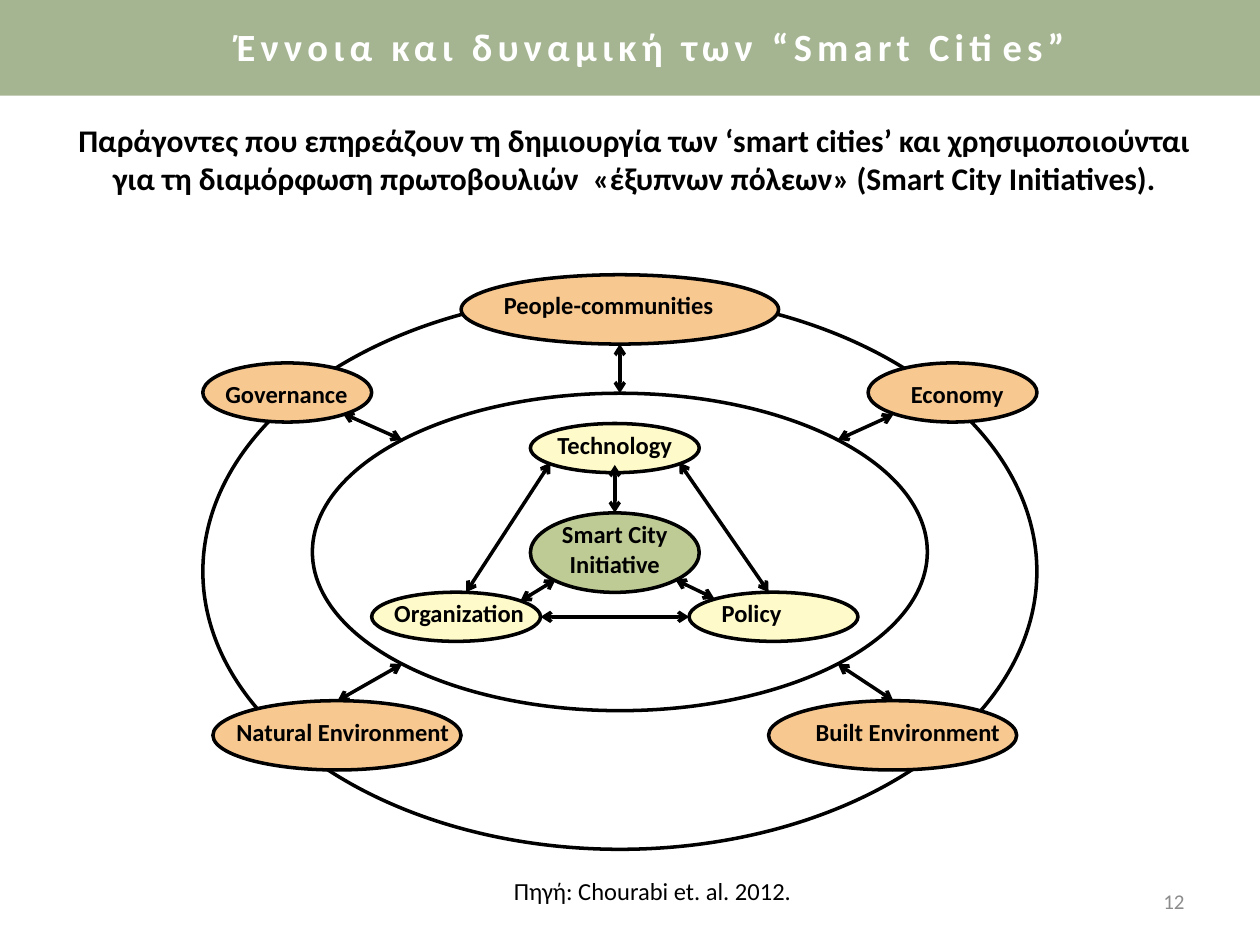
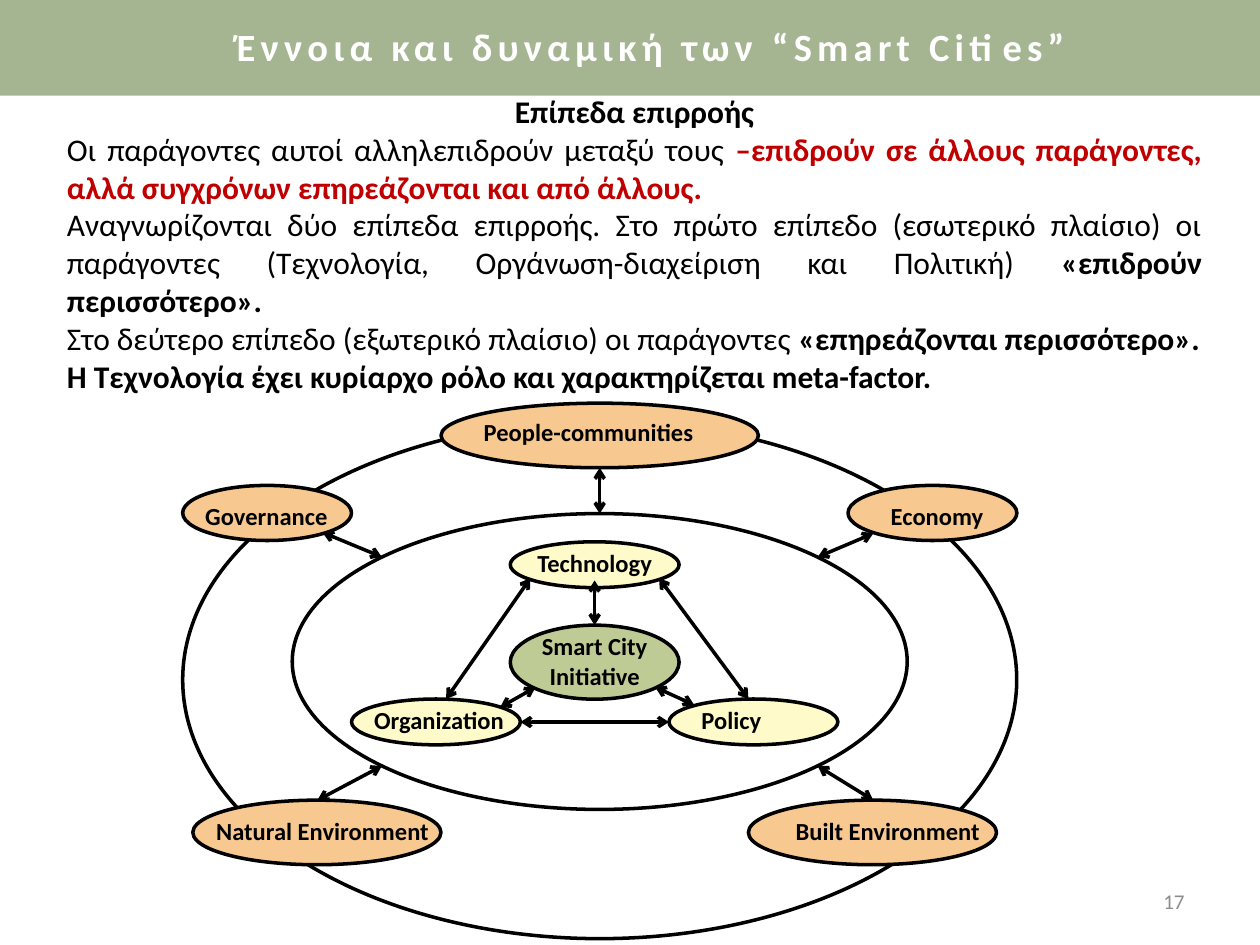
from lxml import etree
from pptx import Presentation
from pptx import util as u
from pptx.dml.color import RGBColor
from pptx.enum import shapes, text
from pptx.oxml.ns import qn

Pt = u.Pt
LEFT, CENTER, RIGHT, JUSTIFY = (text.PP_ALIGN.LEFT, text.PP_ALIGN.CENTER,
                                text.PP_ALIGN.RIGHT, text.PP_ALIGN.JUSTIFY)
COLORS = {
    "band": "A5B592", "white": "FFFFFF", "black": "000000", "number": "8C8C8C",
    "accent": "C00000", "outer": "F8C891", "inner": "FEFAC9", "core": "BECB95",
}
FONT = "Calibri"
TITLE = "Έννοια και δυναμική των “Smart Cities”"

# Diagram, in points from its top left corner
# Ellipses: left, top, width, height, fill
RINGS = [(0, 10.8, 476.6, 317.5, None), (62.6, 67.7, 351.4, 181.4, None)]
# Factors: the same, then label, its offset from the ellipse, width and alignment
FACTORS = [
    (147.6, 0, 181.4, 39.6, "outer", "People-communities", 17.3, 5, 141.8, LEFT),
    (0, 50.4, 96.5, 33.8, "outer", "Governance", 5.8, 5.8, 96.5, LEFT),
    (380.2, 50.4, 96.5, 33.8, "outer", "Economy", 17.3, 5.8, 96.5, LEFT),
    (5.8, 243.4, 141.8, 39.6, "outer", "Natural Environment", -28.1, 5.8, 204.5, CENTER),
    (323.3, 243.4, 141.8, 39.6, "outer", "Built Environment", 17.3, 5.8, 124.6, CENTER),
    (187.2, 85, 96.5, 28.1, "inner", "Technology", 0, 0, 96.5, CENTER),
    (96.5, 181.4, 96.5, 28.1, "inner", "Organization", 5.8, 0, 96.5, LEFT),
    (277.9, 181.4, 96.5, 28.1, "inner", "Policy", 11.5, 0, 96.5, LEFT),
    (187.2, 136.1, 96.5, 45.4, "core", "Smart City Initiative", 0, 0, 96.5, CENTER),
]
# Influences: from x, y to x, y
INFLUENCES = [
    (79.9, 79.2, 113.8, 94.3),       # Governance - inner ring
    (238.3, 39.6, 238.3, 67.7),      # People - inner ring
    (394.6, 79.9, 362.9, 94.3),      # Economy - inner ring
    (394.6, 243.4, 362.9, 222.5),    # Built Environment - inner ring
    (113.8, 222.5, 77, 243.4),       # inner ring - Natural Environment
    (198.7, 107.3, 150.5, 181.4),    # Technology - Organization
    (272.2, 107.3, 323.3, 181.4),    # Technology - Policy
    (193, 195.5, 277.9, 195.5),      # Organization - Policy
    (181.4, 186.5, 201.6, 174.2),    # Organization - Initiative
    (270, 174.2, 292.3, 185),        # Initiative - Policy
    (235.4, 108.7, 235.4, 136.1),    # Technology - Initiative
]

# Slides: runs are (text, bold, colour)
SLIDES = [
    {
        "number": "12", "body_top": 65.5, "body_height": 51,
        "origin": (115.9, 157), "scale": 1,
        "source": "Πηγή: Chourabi et. al. 2012.",
        "body": [
            (CENTER, [("Παράγοντες που επηρεάζουν τη δημιουργία των ‘smart cities’ και "
                       "χρησιμοποιούνται για τη διαμόρφωση πρωτοβουλιών  «έξυπνων πόλεων» "
                       "(Smart City Initiatives).", True, "black")]),
        ],
    },
    {
        "number": "17", "body_top": 49, "body_height": 204,
        "origin": (104.4, 230.4), "scale": 0.932,
        "source": None,
        "body": [
            (CENTER, [("Επίπεδα επιρροής", True, "black")]),
            (JUSTIFY, [("Οι παράγοντες αυτοί αλληλεπιδρούν μεταξύ τους ", False, "black"),
                       ("–επιδρούν σε άλλους παράγοντες, αλλά συγχρόνων επηρεάζονται και "
                        "από άλλους.", True, "accent")]),
            (JUSTIFY, [("Αναγνωρίζονται δύο επίπεδα επιρροής. Στο πρώτο επίπεδο (εσωτερικό "
                        "πλαίσιο) οι παράγοντες (Τεχνολογία, Οργάνωση-διαχείριση και "
                        "Πολιτική) ", False, "black"),
                       ("«επιδρούν περισσότερο».", True, "black")]),
            (JUSTIFY, [("Στο δεύτερο επίπεδο (εξωτερικό πλαίσιο) οι παράγοντες ",
                        False, "black"),
                       ("«επηρεάζονται περισσότερο».", True, "black")]),
            (JUSTIFY, [("Η Τεχνολογία έχει κυρίαρχο ρόλο και χαρακτηρίζεται meta-factor.",
                        True, "black")]),
        ],
    },
]


def add_run(paragraph, words, size, bold=False, color="black"):
    run = paragraph.add_run()
    run.text = words
    run.font.name = FONT
    run.font.size = Pt(size)
    run.font.bold = bold
    run.font.color.rgb = RGBColor.from_string(COLORS[color])
    return run


def place(shape, left, top, width, height, anchor=text.MSO_ANCHOR.TOP, wrap=True):
    shape.left, shape.top, shape.width, shape.height = map(Pt, (left, top, width, height))
    frame = shape.text_frame
    frame.auto_size = text.MSO_AUTO_SIZE.NONE
    frame.vertical_anchor = anchor
    frame.word_wrap = wrap
    return frame


prs = Presentation()
prs.slide_width, prs.slide_height = Pt(720), Pt(540)

for content in SLIDES:
    slide = prs.slides.add_slide(prs.slide_layouts[1])
    title, body = slide.placeholders

    # Band, behind the title
    band = slide.shapes.add_shape(shapes.MSO_SHAPE.RECTANGLE, 0, 0, prs.slide_width, Pt(54.7))
    band.shadow.inherit = False
    band.fill.solid()
    band.fill.fore_color.rgb = RGBColor.from_string(COLORS["band"])
    band.line.fill.background()
    slide.shapes._spTree.insert(2, band._element)

    # Title
    heading = place(title, 94.3, 9.4, 555.8, 33.8).paragraphs[0]
    heading.alignment = CENTER
    heading_run = add_run(heading, TITLE, 22, True, "white")
    heading_run.font._element.set("spc", "300")

    # Slide number
    number_box = slide.shapes.add_textbox(0, 0, 0, 0)
    number = place(number_box, 516.2, 500.4, 167.8, 28.8, text.MSO_ANCHOR.MIDDLE).paragraphs[0]
    number.alignment = RIGHT
    add_run(number, content["number"], 12, color="number")

    # Diagram: rings and factors
    x0, y0 = content["origin"]
    scale = content["scale"]
    for left, top, width, height, fill, *label in RINGS + FACTORS:
        ellipse = slide.shapes.add_shape(
            shapes.MSO_SHAPE.OVAL, Pt(x0 + left), Pt(y0 + top * scale),
            Pt(width), Pt(height * scale))
        ellipse.shadow.inherit = False
        ellipse.line.color.rgb = RGBColor.from_string(COLORS["black"])
        ellipse.line.width = Pt(2)
        if not fill:
            ellipse.fill.background()
            continue
        ellipse.fill.solid()
        ellipse.fill.fore_color.rgb = RGBColor.from_string(COLORS[fill])

        words, dx, dy, label_width, align = label
        label_box = slide.shapes.add_textbox(0, 0, 0, 0)
        label_height = 41 if fill == "core" else 24.5
        factor = place(label_box, x0 + left + dx, y0 + (top + dy) * scale,
                       label_width, label_height * scale).paragraphs[0]
        factor.alignment = align
        add_run(factor, words, 14, True)

    # Diagram: two-way influences
    for x1, y1, x2, y2 in INFLUENCES:
        influence = slide.shapes.add_connector(
            shapes.MSO_CONNECTOR.STRAIGHT, Pt(x0 + x1), Pt(y0 + y1 * scale),
            Pt(x0 + x2), Pt(y0 + y2 * scale))
        influence.line.color.rgb = RGBColor.from_string(COLORS["black"])
        influence.line.width = Pt(2)
        outline = influence.line._get_or_add_ln()
        for end in ("a:headEnd", "a:tailEnd"):
            etree.SubElement(outline, qn(end), type="arrow")
        etree.SubElement(influence._element.spPr, qn("a:effectLst"))

    # Body text
    frame = place(body, 31, content["body_top"], 663.1, content["body_height"])
    for i, (align, runs) in enumerate(content["body"]):
        paragraph = frame.add_paragraph() if i else frame.paragraphs[0]
        properties = paragraph._p.get_or_add_pPr()
        properties.set("marL", "0")
        properties.set("indent", "0")
        etree.SubElement(properties, qn("a:buNone"))
        paragraph.alignment = align
        paragraph.space_before = Pt(0)
        for words, bold, color in runs:
            add_run(paragraph, words, 18, bold, color)

    # Source of the diagram
    if content["source"]:
        source_box = slide.shapes.add_textbox(0, 0, 0, 0)
        source = place(source_box, 286.6, 496.8, 174.2, 24.5, wrap=False).paragraphs[0]
        source.alignment = JUSTIFY
        add_run(source, content["source"], 14)

prs.save("out.pptx")
